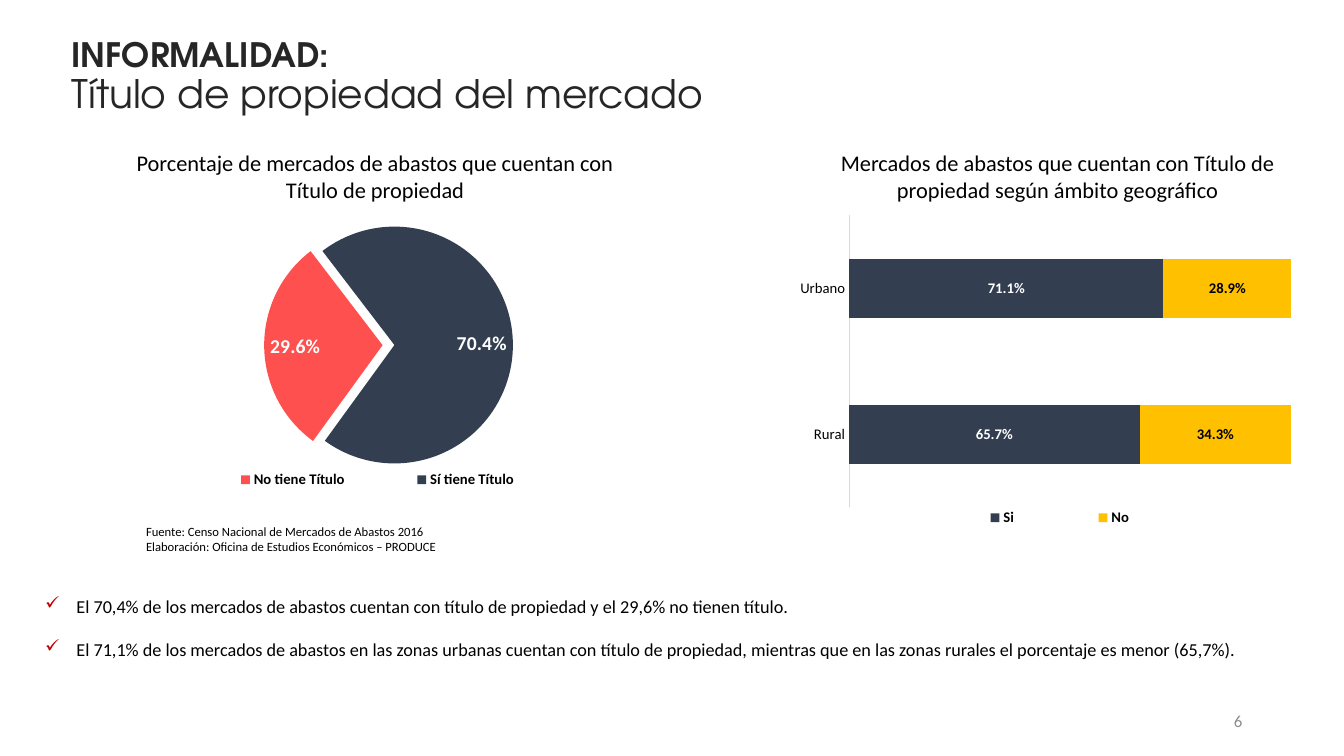
from pptx import Presentation
from pptx.chart.data import CategoryChartData
from pptx.dml.color import RGBColor
from pptx.enum import chart as ch, text
from pptx.oxml import parse_xml
from pptx.oxml.ns import nsdecls, qn
from pptx.util import Inches, Pt

BLACK = RGBColor(0, 0, 0)
WHITE = RGBColor(255, 255, 255)
TITLE_GRAY = RGBColor(0x26, 0x26, 0x26)
NUMBER_GRAY = RGBColor(0x8C, 0x8C, 0x8C)
NAVY = RGBColor(0x33, 0x3F, 0x50)
RED = RGBColor(0xFF, 0x50, 0x50)
YELLOW = RGBColor(0xFF, 0xC0, 0x00)
AXIS_GRAY = RGBColor(0xD9, 0xD9, 0xD9)

deck = Presentation()
deck.slide_width, deck.slide_height = Inches(13.33), Inches(7.5)
page = deck.slides.add_slide(deck.slide_layouts[5])


def add_text(place, lines, size, color=BLACK, align=text.PP_ALIGN.LEFT):
    box = page.shapes.add_textbox(*[Inches(n) for n in place])
    frame = box.text_frame
    frame.word_wrap = True
    frame.text = "\n".join(lines)
    for para in frame.paragraphs:
        para.alignment = align
        for span in para.runs:
            span.font.size, span.font.name = Pt(size), "Calibri"
            span.font.color.rgb = color
    return frame


def add_chart(kind, place, categories, series, plot_box, legend_box):
    data = CategoryChartData(number_format="0.0%")
    data.categories = categories
    for name, values in series:
        data.add_series(name, values)
    chart = page.shapes.add_chart(kind, *[Inches(n) for n in place], data).chart
    chart.has_title = False
    chart.font.size, chart.font.name = Pt(10), "Calibri"
    chart.font.color.rgb = BLACK
    chart.has_legend = True
    chart.legend.position = ch.XL_LEGEND_POSITION.BOTTOM
    chart.legend.font.size, chart.legend.font.bold = Pt(10.5), True
    chart.legend.font.name = "Calibri"
    chart.legend.font.color.rgb = BLACK
    # Fixed places for the plot and the legend
    for tag, index, target, fractions in (("c:plotArea", 0, "<c:layoutTarget val='inner'/>", plot_box),
                                          ("c:legend", 1, "", legend_box)):
        parent = chart.element.find(".//" + qn(tag))
        for old in parent.findall(qn("c:layout")):
            parent.remove(old)
        modes = "<c:xMode val='edge'/><c:yMode val='edge'/>"
        sizes = "".join(f"<c:{key} val='{n}'/>" for key, n in zip("xywh", fractions))
        parent.insert(index, parse_xml(
            f"<c:layout {nsdecls('c')}><c:manualLayout>{target}{modes}{sizes}"
            "</c:manualLayout></c:layout>"))
    return chart


# Title
title = page.shapes.title
title.left, title.top, title.width, title.height = [Inches(n) for n in (0.61, 0.25, 11.96, 1.05)]
title.text_frame.text = "INFORMALIDAD:\vTítulo de propiedad del mercado"
title.text_frame.auto_size = text.MSO_AUTO_SIZE.NONE
title.text_frame.vertical_anchor = text.MSO_ANCHOR.MIDDLE
para = title.text_frame.paragraphs[0]
para.alignment, para.line_spacing = text.PP_ALIGN.LEFT, 0.9
for span, size, bold in zip(para.runs, (24, 28), (True, False)):
    span.font.size, span.font.bold, span.font.name = Pt(size), bold, "TeX Gyre Adventor"
    span.font.color.rgb = TITLE_GRAY

# Chart headings
for left, width, heading in (
        (0.99, 5.46, "Porcentaje de mercados de abastos que cuentan con Título de propiedad"),
        (7.81, 5.36, "Mercados de abastos que cuentan con Título de propiedad según ámbito geográfico")):
    add_text((left, 1.43, width, 0.64), [heading], 16, align=text.PP_ALIGN.CENTER)

# Pie chart with the larger slice pulled out
pie = add_chart(ch.XL_CHART_TYPE.PIE, (1.22, 1.97, 5, 3),
                ["No tiene Título", "Sí tiene Título"], [("Mercados", (0.296, 0.704))],
                (0.28, 0.09, 0.47, 0.79), (0.1, 0.88, 0.81, 0.1))
pie.legend.include_in_layout = True
shares = pie.plots[0].series[0]
for index, color in enumerate((RED, NAVY)):
    fill = shares.points[index].format.fill
    fill.solid()
    fill.fore_color.rgb = color
pulled_slice = shares.format and pie.element.findall(".//" + qn("c:dPt"))[1]
pulled_slice.find(qn("c:spPr")).addprevious(
    parse_xml(f"<c:explosion {nsdecls('c')} val='10'/>"))
pie.element.find(".//" + qn("c:pieChart")).append(
    parse_xml(f"<c:firstSliceAng {nsdecls('c')} val='216'/>"))

# Stacked bars by area
bars = add_chart(ch.XL_CHART_TYPE.BAR_STACKED_100, (7.81, 2.07, 5.1, 3.37),
                 ["Rural", "Urbano"], [("Si", (0.657, 0.711)), ("No", (0.343, 0.289))],
                 (0.12, 0.02, 0.86, 0.86), (0.24, 0.87, 0.58, 0.08))
bars.legend.include_in_layout = False
bars.plots[0].gap_width, bars.plots[0].overlap = 150, 100
bars.value_axis.visible = False
bars.value_axis.has_major_gridlines = False
areas = bars.category_axis
areas.major_tick_mark = ch.XL_TICK_MARK.NONE
areas.tick_labels.font.size = Pt(10.5)
areas.tick_labels.font.name = "Calibri"
areas.tick_labels.font.color.rgb = BLACK
areas.format.line.color.rgb = AXIS_GRAY
areas.format.line.width = Pt(0.75)
yes, no = bars.plots[0].series
for series, color in ((yes, NAVY), (no, YELLOW)):
    series.format.fill.solid()
    series.format.fill.fore_color.rgb = color

# Value labels
inside_end, center = ch.XL_LABEL_POSITION.INSIDE_END, ch.XL_LABEL_POSITION.CENTER
for series, size, color, position in ((shares, 14, WHITE, inside_end),
                                      (yes, 10.5, WHITE, center), (no, 10.5, BLACK, center)):
    labels = series.data_labels
    labels.show_value = True
    labels.number_format, labels.number_format_is_linked = "0.0%", False
    labels.position = position
    labels.font.size, labels.font.bold, labels.font.name = Pt(size), True, "Calibri"
    labels.font.color.rgb = color

# Source note
add_text((1.35, 5.15, 6.21, 0.4),
         ["Fuente: Censo Nacional de Mercados de Abastos 2016",
          "Elaboración: Oficina de Estudios Económicos – PRODUCE"], 9)

# Findings with check marks
findings = add_text(
    (0.35, 5.86, 12.65, 0.76),
    ["El 70,4% de los mercados de abastos cuentan con título de propiedad y el 29,6% no tienen título.",
     "El 71,1% de los mercados de abastos en las zonas urbanas cuentan con título de propiedad, "
     "mientras que en las zonas rurales el porcentaje es menor (65,7%)."],
    13, align=text.PP_ALIGN.JUSTIFY)
for para in findings.paragraphs:
    props = para._p.get_or_add_pPr()
    props.set("marL", str(Inches(0.31)))
    props.set("indent", str(-Inches(0.31)))
    for xml in (f"<a:buClr {nsdecls('a')}><a:srgbClr val='C00000'/></a:buClr>",
                f"<a:buChar {nsdecls('a')} char='✓'/>"):
        props.append(parse_xml(xml))
findings.paragraphs[1].space_before = Pt(15)

# Page number
number = add_text((9.42, 6.95, 3, 0.4), ["6"], 12, NUMBER_GRAY, text.PP_ALIGN.RIGHT)
number.vertical_anchor = text.MSO_ANCHOR.MIDDLE

deck.save("out.pptx")
